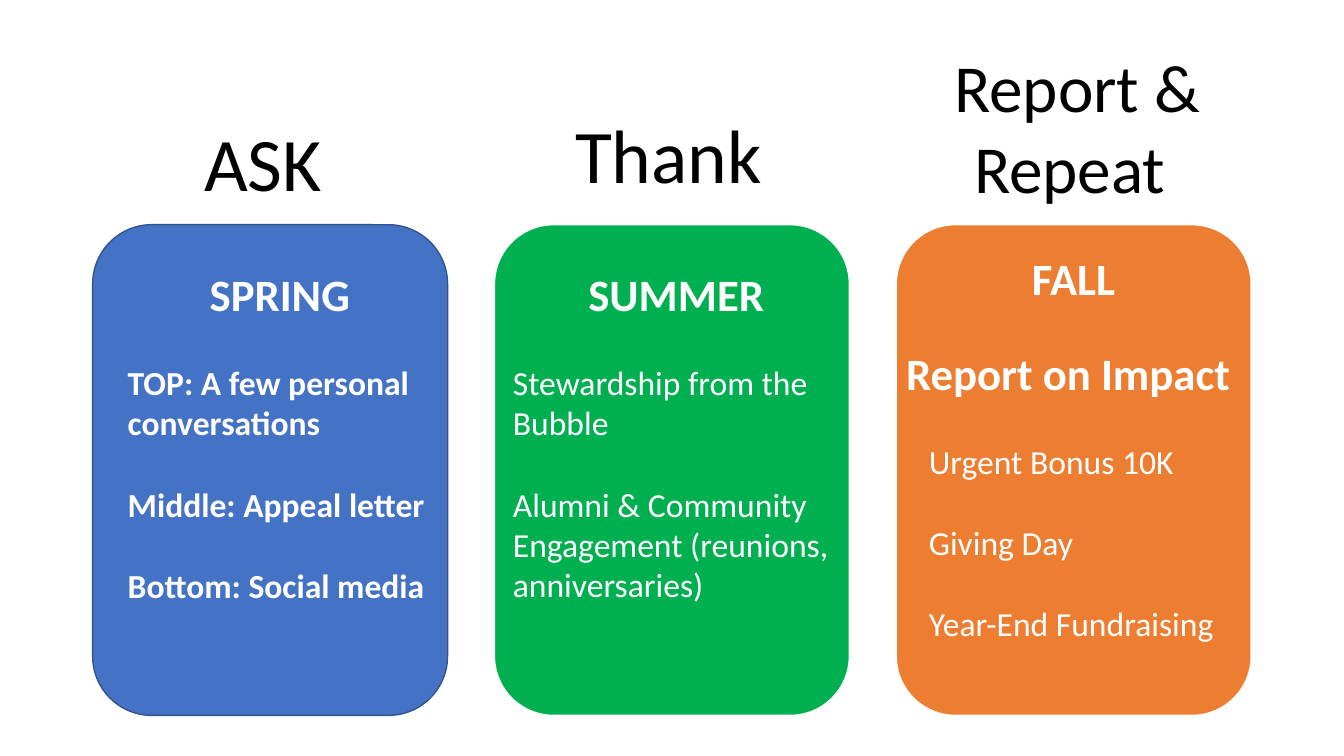
from pptx import Presentation
from pptx.dml.color import RGBColor
from pptx.enum.shapes import MSO_SHAPE
from pptx.enum.text import PP_ALIGN
from pptx.util import Pt

WHITE = RGBColor(0xFF, 0xFF, 0xFF)
BLACK = RGBColor(0, 0, 0)
BLUE = RGBColor(0x44, 0x72, 0xC4)
NAVY = RGBColor(0x32, 0x54, 0x91)
GREEN = RGBColor(0, 0xB0, 0x50)
ORANGE = RGBColor(0xED, 0x7D, 0x31)
GAP = 29.3  # one line of 24 pt text

deck = Presentation()
deck.slide_width, deck.slide_height = Pt(960), Pt(540)
slide = deck.slides.add_slide(deck.slide_layouts[6])


def add_box(left, top, width, height):
    frame = slide.shapes.add_textbox(Pt(left), Pt(top), Pt(width), Pt(height)).text_frame
    frame.word_wrap = True
    return frame


def write(frame, text, size=24, color=WHITE, bold=False, center=False, gap=0, indent=0, tail=False):
    first = not frame.paragraphs[0].runs
    para = frame.paragraphs[0] if first else frame.add_paragraph()
    para.alignment = PP_ALIGN.CENTER if center else PP_ALIGN.LEFT
    para.space_before = Pt(gap)
    if indent:
        para._p.get_or_add_pPr().set("marL", str(Pt(indent)))
    parts = [(text, size), (" ", 18)] if tail else [(text, size)]
    for words, points in parts:
        run = para.add_run()
        run.text = words
        run.font.name = "Calibri"
        run.font.size = Pt(points)
        run.font.bold = bold
        run.font.color.rgb = color


# Season cards
for col, (fill, edge) in enumerate([(BLUE, NAVY), (GREEN, WHITE), (ORANGE, WHITE)]):
    card = slide.shapes.add_shape(
        MSO_SHAPE.ROUNDED_RECTANGLE, Pt(66.2 + 287 * col), Pt(160.5), Pt(253.5), Pt(350.5))
    card.shadow.inherit = False
    card.fill.solid()
    card.fill.fore_color.rgb = fill
    card.line.color.rgb = edge
    card.line.width = Pt(1)

# Spring
spring = add_box(84.2, 187.2, 235.5, 307.5)
write(spring, "SPRING", size=32, bold=True, center=True, tail=True)
for item in ["TOP: A few personal conversations", "Middle: Appeal letter", "Bottom: Social media"]:
    write(spring, item, bold=True, gap=GAP)

# Summer
summer = add_box(359.3, 187.2, 247.7, 271.5)
write(summer, "SUMMER", size=32, bold=True, center=True)
for item in ["Stewardship from the Bubble",
             "Alumni & Community Engagement (reunions, anniversaries)"]:
    write(summer, item, gap=GAP)

# Fall
fall = add_box(640.1, 175.7, 253.5, 332)
write(fall, "FALL", size=32, bold=True, center=True)
write(fall, "Report on Impact", size=32, bold=True, gap=GAP)
for item in ["Urgent Bonus 10K", "Giving Day", "Year-End Fundraising"]:
    write(fall, item, gap=GAP, indent=16.3)

# Headings above the cards
for text, left, top, high, size, tail in [
        ("ASK", 84.2, 79.2, 72.7, 54, True),
        ("Thank", 373.7, 73.4, 72.7, 54, True),
        ("Report & Repeat ", 663.8, 28.8, 123.8, 48, False)]:
    write(add_box(left, top, 211.7, high), text, size=size, color=BLACK, center=True, tail=tail)

deck.save("out.pptx")
